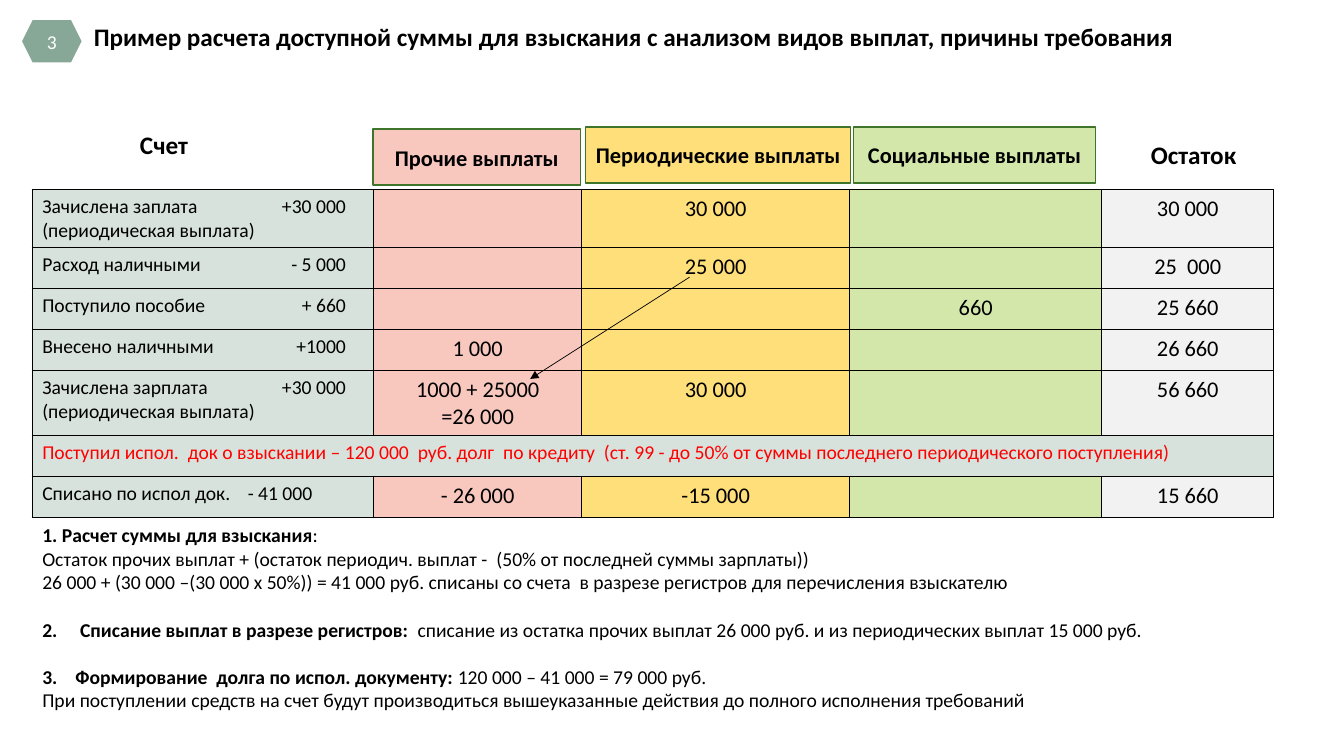
from lxml.etree import SubElement
from pptx import Presentation
from pptx.dml.color import RGBColor
from pptx.enum.shapes import MSO_CONNECTOR, MSO_SHAPE
from pptx.enum.text import MSO_ANCHOR, MSO_AUTO_SIZE, PP_ALIGN
from pptx.oxml.ns import qn
from pptx.util import Pt

COLORS = {
    "black": "000000", "white": "FFFFFF", "red": "FF0000",
    "badge": "87A896", "header_line": "3E752A",
    "account": "D7E2DC", "other": "F8C8BE", "periodic": "FFDF79",
    "social": "D2E7A9", "balance": "F2F2F2",
}
FONT = "Calibri"

COLUMNS = [("account", 244), ("other", 148.5), ("periodic", 191.5),
           ("social", 180), ("balance", 123)]
ROW_HEIGHTS = [41.4, 29.3, 29.3, 29.3, 46, 29.3, 29.3]
ROWS = [
    ["Зачислена заплата\t+30 000\n(периодическая выплата)", "", "30 000", "", "30 000"],
    ["Расход наличными\t- 5 000", "", "25 000", "", "25  000"],
    ["Поступило пособие\t+ 660", "", "", "660", "25 660"],
    ["Внесено наличными\t+1000", "1 000", "", "", "26 660"],
    ["Зачислена зарплата\t+30 000\n(периодическая выплата)", "1000 + 25000\n=26 000",
     "30 000", "", "56 660"],
    ["Поступил испол.  док о взыскании – 120 000  руб. долг  по кредиту  "
     "(ст. 99 - до 50% от суммы последнего периодического поступления)", "", "", "", ""],
    ["Списано по испол док.\t- 41 000", "- 26 000", "-15 000", "", "15 660"],
]
CLAIM_ROW = 5
AMOUNT_TAB, WRITE_OFF_TAB = 217, 193

HEADERS = [("Прочие выплаты", "other", 266.4, 92.2, 148.3),
           ("Периодические выплаты", "periodic", 418.3, 90.7, 189.4),
           ("Социальные выплаты", "social", 609.8, 90.7, 172.8)]

# Bold part, plain part, number of the list item, hanging indent
NOTES = [
    ("1. Расчет суммы для взыскания", ":", None, 0),
    ("", "Остаток прочих выплат + (остаток периодич. выплат -  "
         "(50% от последней суммы зарплаты))", None, 0),
    ("", "26 000 + (30 000 –(30 000 х 50%)) = 41 000 руб. списаны со счета  "
         "в разрезе регистров для перечисления взыскателю", None, 0),
    ("Списание выплат в разрезе регистров:  ",
     "списание из остатка прочих выплат 26 000 руб. и из периодических выплат 15 000 руб.",
     2, 27),
    ("Формирование  долга по испол. документу: ", "120 000 – 41 000 = 79 000 руб.", 3, 23.6),
    ("", "При поступлении средств на счет будут производиться вышеуказанные действия "
         "до полного исполнения требований", None, 0),
]


def rgb(name):
    return RGBColor.from_string(COLORS[name])


def format_text(frame, size, color="black", bold=False, align=PP_ALIGN.LEFT):
    for para in frame.paragraphs:
        para.alignment = align
        for span in para.runs:
            span.font.name = FONT
            span.font.size = Pt(size)
            span.font.bold = bold
            span.font.color.rgb = rgb(color)


def place(shape, left, top, width, height):
    shape.left, shape.top = Pt(left), Pt(top)
    shape.width, shape.height = Pt(width), Pt(height)


def add_block(page, preset, text, fill, bounds, size, color, line=None, bold=False):
    box = page.shapes.add_shape(preset, *map(Pt, bounds))
    box.shadow.inherit = False
    box.fill.solid()
    box.fill.fore_color.rgb = rgb(fill)
    if line:
        box.line.color.rgb = rgb(line)
        box.line.width = Pt(1)
    else:
        box.line.fill.background()
    frame = box.text_frame
    frame.text = text
    frame.word_wrap = False
    frame.vertical_anchor = MSO_ANCHOR.MIDDLE
    format_text(frame, size, color, bold, PP_ALIGN.CENTER)


def add_label(page, text, left, top, width):
    box = page.shapes.add_textbox(Pt(left), Pt(top), Pt(width), Pt(29))
    box.text_frame.text = text
    box.text_frame.word_wrap = False
    format_text(box.text_frame, 18, bold=True)


def add_title(page, text):
    title = page.shapes.title
    place(title, 59.8, 11.5, 883.4, 29)
    title.text_frame.text = text
    title.text_frame.auto_size = MSO_AUTO_SIZE.NONE
    title.text_frame.vertical_anchor = MSO_ANCHOR.TOP
    format_text(title.text_frame, 18, bold=True)


def style_cell(cell, fill):
    """Fill the cell and draw its four borders."""
    properties = cell._tc.get_or_add_tcPr()
    for side in ("a:lnL", "a:lnR", "a:lnT", "a:lnB"):
        border = SubElement(properties, qn(side), w=str(Pt(1)))
        color = SubElement(SubElement(border, qn("a:solidFill")), qn("a:srgbClr"))
        color.set("val", COLORS["black"])
    cell.fill.solid()
    cell.fill.fore_color.rgb = rgb(fill)


def set_right_tab(para, position):
    tabs = SubElement(para._p.get_or_add_pPr(), qn("a:tabLst"))
    SubElement(tabs, qn("a:tab"), pos=str(Pt(position)), algn="r")


def add_payment_table(page):
    width = sum(width for _, width in COLUMNS)
    frame = page.shapes.add_table(len(ROWS), len(COLUMNS), Pt(23), Pt(135.6),
                                  Pt(width), Pt(sum(ROW_HEIGHTS)))
    table = frame.table
    table.first_row = table.horz_banding = False
    for column, (_, width) in zip(table.columns, COLUMNS):
        column.width = Pt(width)
    for row, height in zip(table.rows, ROW_HEIGHTS):
        row.height = Pt(height)
    for row_index, texts in enumerate(ROWS):
        is_claim = row_index == CLAIM_ROW
        for column_index, text in enumerate(texts):
            cell = table.cell(row_index, column_index)
            style_cell(cell, "account" if is_claim else COLUMNS[column_index][0])
            if not text:
                continue
            cell.text_frame.text = text
            if column_index:
                format_text(cell.text_frame, 16, align=PP_ALIGN.CENTER)
                continue
            format_text(cell.text_frame, 14, "red" if is_claim else "black")
            if "\t" in text:
                last = row_index == len(ROWS) - 1
                set_right_tab(cell.text_frame.paragraphs[0],
                              WRITE_OFF_TAB if last else AMOUNT_TAB)
    table.cell(CLAIM_ROW, 0).merge(table.cell(CLAIM_ROW, len(COLUMNS) - 1))


def set_numbering(para, number, indent):
    properties = para._p.get_or_add_pPr()
    properties.set("marL", str(Pt(indent)))
    properties.set("indent", str(-Pt(indent)))
    if number:
        SubElement(properties, qn("a:buFont"), typeface=FONT)
        SubElement(properties, qn("a:buAutoNum"), type="arabicPeriod", startAt=str(number))
    else:
        SubElement(properties, qn("a:buNone"))


def add_notes_list(page):
    body = page.placeholders[1]
    place(body, 23, 370, 949, 160)
    frame = body.text_frame
    frame.auto_size = MSO_AUTO_SIZE.NONE
    for index, (strong, plain, number, indent) in enumerate(NOTES):
        para = frame.add_paragraph() if index else frame.paragraphs[0]
        for text in filter(None, (strong, plain)):
            para.add_run().text = text
        para.line_spacing = 1.0
        para.space_before = Pt(17 if number else 0)
        set_numbering(para, number, indent)
    format_text(frame, 14)
    for para, (strong, *_) in zip(frame.paragraphs, NOTES):
        para.runs[0].font.bold = bool(strong)


def add_arrow(page, start, end):
    arrow = page.shapes.add_connector(MSO_CONNECTOR.STRAIGHT, *map(Pt, start + end))
    arrow.line.color.rgb = rgb("black")
    arrow.line.width = Pt(0.5)
    SubElement(arrow.line._get_or_add_ln(), qn("a:tailEnd"), type="triangle")
    SubElement(arrow._element.spPr, qn("a:effectLst"))


def main():
    deck = Presentation()
    deck.slide_width, deck.slide_height = Pt(960), Pt(540)
    page = deck.slides.add_slide(deck.slide_layouts[1])
    add_title(page, "Пример расчета доступной суммы для взыскания "
                    "с анализом видов выплат, причины требования")
    add_block(page, MSO_SHAPE.HEXAGON, "3", "badge", (15.8, 14.4, 42.5, 30.2), 14, "white")
    for text, fill, left, top, width in HEADERS:
        add_block(page, MSO_SHAPE.RECTANGLE, text, fill, (left, top, width, 40),
                  16, "black", "header_line", True)
    add_payment_table(page)
    add_label(page, "Счет", 92.9, 88.6, 53.3)
    add_label(page, "Остаток", 815, 95.8, 80)
    add_notes_list(page)
    add_arrow(page, (492.5, 198), (378.7, 270.7))
    deck.save("out.pptx")


if __name__ == "__main__":
    main()
